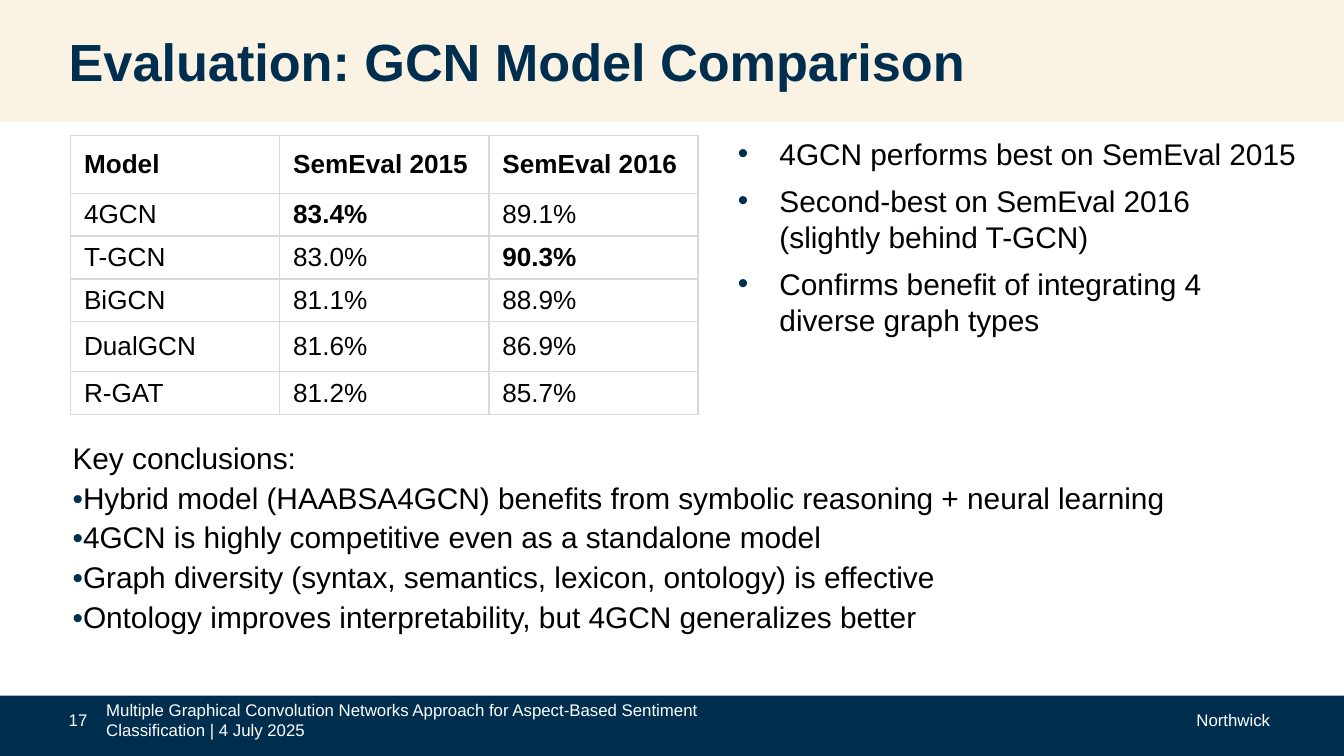
import pptx
import pptx.dml.color
import pptx.enum.shapes
import pptx.enum.text
import pptx.oxml.ns
import pptx.util
from lxml import etree

RGBColor = pptx.dml.color.RGBColor
NAVY = RGBColor(0x00, 0x2E, 0x4F)
CREAM = RGBColor(0xFA, 0xF2, 0xE3)
WHITE = RGBColor(0xFF, 0xFF, 0xFF)
BLACK = RGBColor(0x00, 0x00, 0x00)
GRAY = RGBColor(0xD9, 0xD9, 0xD9)

FONT = "Arial"
SLIDE_WIDTH = pptx.util.Inches(10)
SLIDE_HEIGHT = SLIDE_WIDTH * 9 // 16
LEFT = pptx.enum.text.PP_ALIGN.LEFT
RIGHT = pptx.enum.text.PP_ALIGN.RIGHT
TOP = pptx.enum.text.MSO_ANCHOR.TOP
MIDDLE = pptx.enum.text.MSO_ANCHOR.MIDDLE

# Shared positions, in percent of the slide's size
MARGIN = 5.12
CONTENT_TOP = 17.95
FOOTER_TOP = 93.9
FOOTER_HEIGHT = 2.7

RESULTS = [
    ("Model", "SemEval 2015", "SemEval 2016"),
    ("4GCN", "83.4%", "89.1%"),
    ("T-GCN", "83.0%", "90.3%"),
    ("BiGCN", "81.1%", "88.9%"),
    ("DualGCN", "81.6%", "86.9%"),
    ("R-GAT", "81.2%", "85.7%"),
]
BEST_SCORES = ("83.4%", "90.3%")
ROW_HEIGHTS = [7.6, 5.68, 5.68, 5.68, 6.6, 5.68]

FINDINGS = [
    "4GCN performs best on SemEval 2015",
    "Second-best on SemEval 2016 (slightly behind T-GCN)",
    "Confirms benefit of integrating 4 diverse graph types",
]
CONCLUSIONS = [
    "Key conclusions:",
    "Hybrid model (HAABSA4GCN) benefits from symbolic reasoning + neural learning",
    "4GCN is highly competitive even as a standalone model",
    "Graph diversity (syntax, semantics, lexicon, ontology) is effective",
    "Ontology improves interpretability, but 4GCN generalizes better",
]


def across(percent):
    return round(SLIDE_WIDTH * percent / 100)


def down(percent):
    return round(SLIDE_HEIGHT * percent / 100)


def place(left, top, width, height):
    return across(left), down(top), across(width), down(height)


def format_paragraph(paragraph, size, color, bold=False):
    for run in paragraph.runs:
        run.font.name = FONT
        run.font.size = pptx.util.Pt(size)
        run.font.color.rgb = color
        run.font.bold = bold


def add_band(slide, top, height, color):
    band = slide.shapes.add_shape(
        pptx.enum.shapes.MSO_SHAPE.RECTANGLE, *place(0, top, 100, height))
    band.shadow.inherit = False
    band.fill.solid()
    band.fill.fore_color.rgb = color
    band.line.fill.background()


def add_text(slide, box, lines, size, color, bold=False, align=LEFT,
             anchor=TOP, inset=(0, 0)):
    """Add a text box and return its paragraphs; inset is (sides, ends) in inches."""
    text_frame = slide.shapes.add_textbox(*place(*box)).text_frame
    text_frame.word_wrap = True
    text_frame.vertical_anchor = anchor
    sides, ends = map(pptx.util.Inches, inset)
    text_frame.margin_left = text_frame.margin_right = sides
    text_frame.margin_top = text_frame.margin_bottom = ends
    text_frame.text = "\n".join(lines)
    for paragraph in text_frame.paragraphs:
        paragraph.alignment = align
        format_paragraph(paragraph, size, color, bold)
    return text_frame.paragraphs


def add_bullet(paragraph, indent):
    properties = paragraph._p.get_or_add_pPr()
    hanging = pptx.util.Inches(indent)
    properties.set("marL", str(hanging))
    properties.set("indent", str(-hanging))
    bullet_color = etree.SubElement(properties, pptx.oxml.ns.qn("a:buClr"))
    etree.SubElement(bullet_color, pptx.oxml.ns.qn("a:srgbClr"), val=str(NAVY))
    etree.SubElement(properties, pptx.oxml.ns.qn("a:buFont"), typeface=FONT)
    etree.SubElement(properties, pptx.oxml.ns.qn("a:buChar"), char="•")


def add_cell_borders(cell):
    properties = cell._tc.get_or_add_tcPr()
    for side in ("lnL", "lnR", "lnT", "lnB"):
        line = etree.SubElement(properties, pptx.oxml.ns.qn("a:" + side),
                                w=str(pptx.util.Pt(0.75)))
        fill = etree.SubElement(line, pptx.oxml.ns.qn("a:solidFill"))
        etree.SubElement(fill, pptx.oxml.ns.qn("a:srgbClr"), val=str(GRAY))


def add_results_table(slide):
    box = place(5.25, CONTENT_TOP, 46.7, sum(ROW_HEIGHTS))
    table = slide.shapes.add_table(len(RESULTS), len(RESULTS[0]), *box).table
    table.first_row = table.horz_banding = False
    for row, height in zip(table.rows, ROW_HEIGHTS):
        row.height = down(height)
    for row_index, values in enumerate(RESULTS):
        for column_index, value in enumerate(values):
            cell = table.cell(row_index, column_index)
            cell.text = value
            cell.vertical_anchor = MIDDLE
            cell.margin_top = cell.margin_bottom = pptx.util.Inches(0.04)
            add_cell_borders(cell)
            cell.fill.solid()
            cell.fill.fore_color.rgb = WHITE
            bold = row_index == 0 or value in BEST_SCORES
            format_paragraph(cell.text_frame.paragraphs[0], 14, BLACK, bold)


def add_findings(slide):
    paragraphs = add_text(slide, (54.9, CONTENT_TOP, 41.7, 27.9), FINDINGS, 16, BLACK)
    for index, paragraph in enumerate(paragraphs):
        paragraph.space_before = pptx.util.Pt(6 if index else 0)
        add_bullet(paragraph, 0.31)


def add_conclusions(slide):
    heading, *points = CONCLUSIONS
    lines = [heading] + ["•"] * len(points)
    paragraphs = add_text(slide, (4.42, 57.25, 87.6, 30.2), lines, 16, BLACK,
                          inset=(0.1, 0.1))
    for paragraph in paragraphs:
        paragraph.line_spacing = 0.8
    # Each point is a navy dot followed directly by its text
    for paragraph, point in zip(paragraphs[1:], points):
        paragraph.space_before = pptx.util.Pt(6)
        paragraph.add_run().text = point
        format_paragraph(paragraph, 16, BLACK)
        paragraph.runs[0].font.color.rgb = NAVY
    paragraphs[-1].space_after = pptx.util.Pt(6)


def add_footer(slide):
    add_band(slide, 92, 8, NAVY)
    entries = [
        (MARGIN, 2, "17", LEFT, MIDDLE),
        (7.9, 47.2, "Multiple Graphical Convolution Networks Approach for "
         "Aspect-Based Sentiment Classification | 4 July 2025", LEFT, MIDDLE),
        (67.3, 27.2, "Northwick", RIGHT, TOP),
    ]
    for left, width, text, align, anchor in entries:
        add_text(slide, (left, FOOTER_TOP, width, FOOTER_HEIGHT), [text], 9, WHITE,
                 align=align, anchor=anchor)


def main():
    presentation = pptx.Presentation()
    presentation.slide_width = SLIDE_WIDTH
    presentation.slide_height = SLIDE_HEIGHT
    slide = presentation.slides.add_slide(presentation.slide_layouts[6])

    # Header
    add_band(slide, -0.35, 16.5, CREAM)
    add_text(slide, (MARGIN, 1.1, 89.4, 13.9), ["Evaluation: GCN Model Comparison"],
             28, NAVY, bold=True, anchor=MIDDLE, inset=(0, 0.05))

    # Content
    add_results_table(slide)
    add_findings(slide)
    add_conclusions(slide)

    # Footer
    add_footer(slide)
    presentation.save("out.pptx")


if __name__ == "__main__":
    main()
